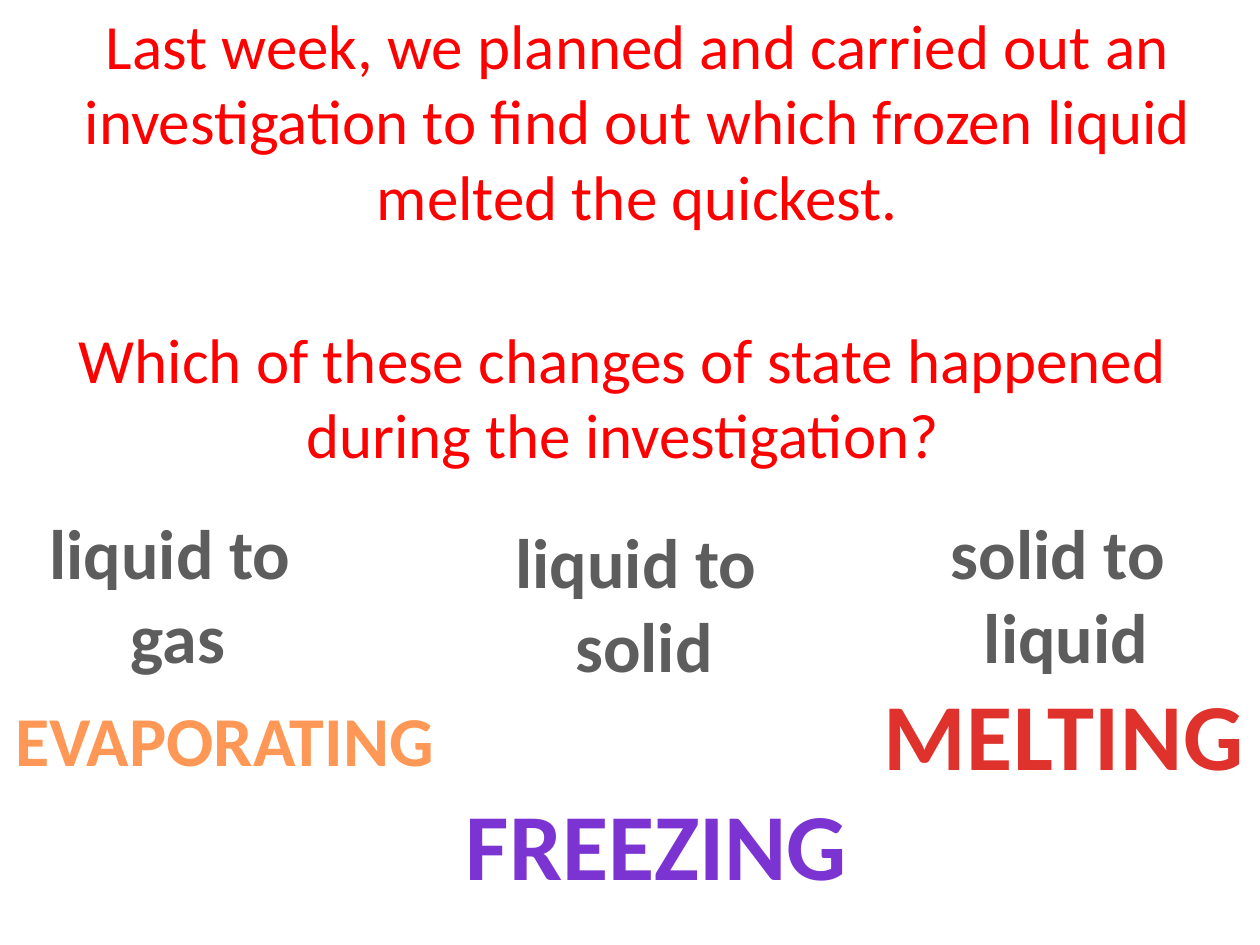
from dataclasses import dataclass

from pptx import Presentation
from pptx.dml.color import RGBColor
from pptx.enum.text import MSO_ANCHOR, MSO_AUTO_SIZE, PP_ALIGN
from pptx.util import Pt

PX = 914400 / 126
TITLE_ONLY = 5
CENTER = PP_ALIGN.CENTER
TOP = MSO_ANCHOR.TOP
FIT_SHAPE = MSO_AUTO_SIZE.SHAPE_TO_FIT_TEXT


@dataclass(frozen=True)
class Theme:
    font: str = "Calibri"
    paper: str = "FFFFFF"
    prompt: str = "FF0000"
    change: str = "5D5D5D"
    evaporating: str = "FF9856"
    freezing: str = "7B34D2"
    melting: str = "E0322D"
    prompt_size: int = 36
    change_size: int = 40
    answer_size: int = 54


THEME = Theme()

# Each column: change wording and box, then answer wording, box, size, colour, tracking
COLUMNS = [
    ("liquid to \ngas", (35, 503, 286, 183),
     "EVAPORATING", (0, 690, 449, 97), THEME.change_size, THEME.evaporating, 0),
    ("liquid to \nsolid", (501, 512, 286, 183),
     "FREEZING", (451, 780, 411, 127), THEME.answer_size, THEME.freezing, 0),
    ("solid to \nliquid", (937, 503, 258, 183),
     "MELTING", (868, 670, 392, 127), THEME.answer_size, THEME.melting, 50),
]


def emu(box):
    return [round(length * PX) for length in box]


def write(shape, text, size, color, bold=False, wrap=True, tracking=0):
    """Fill a shape with centred text in one style."""
    frame = shape.text_frame
    frame.text = text
    frame.word_wrap = wrap
    frame.auto_size = FIT_SHAPE
    frame.vertical_anchor = TOP
    for para in frame.paragraphs:
        para.alignment = CENTER
        for span in para.runs:
            span.font.name = THEME.font
            span.font.size = Pt(size)
            span.font.bold = bold
            span.font.color.rgb = RGBColor.from_string(color)
            if tracking:
                span.font._element.set("spc", str(tracking))


def add_prompt(shape, box, text):
    """Red wording on a white panel."""
    shape.left, shape.top, shape.width, shape.height = emu(box)
    shape.fill.solid()
    shape.fill.fore_color.rgb = RGBColor.from_string(THEME.paper)
    write(shape, text, THEME.prompt_size, THEME.prompt)


def add_label(page, box, text, size, color, tracking=0):
    label = page.shapes.add_textbox(*emu(box))
    write(label, text, size, color, bold=True, wrap=False, tracking=tracking)


def add_column(page, change, change_box, answer, answer_box, size, color, tracking):
    """A change of state with its name below."""
    add_label(page, change_box, change, THEME.change_size, THEME.change)
    add_label(page, answer_box, answer, size, color, tracking)


def main():
    deck = Presentation()
    deck.slide_width, deck.slide_height = emu((1260, 945))
    page = deck.slides.add_slide(deck.slide_layouts[TITLE_ONLY])

    # Recap and question
    add_prompt(page.shapes.title, (15, 0, 1245, 242),
               "Last week, we planned and carried out an investigation "
               "to find out which frozen liquid melted the quickest.")
    question_box = (0, 314, 1245, 165)
    add_prompt(page.shapes.add_textbox(*emu(question_box)), question_box,
               "Which of these changes of state happened during the investigation?")

    # Changes of state
    for column in COLUMNS:
        add_column(page, *column)

    deck.save("out.pptx")


if __name__ == "__main__":
    main()
